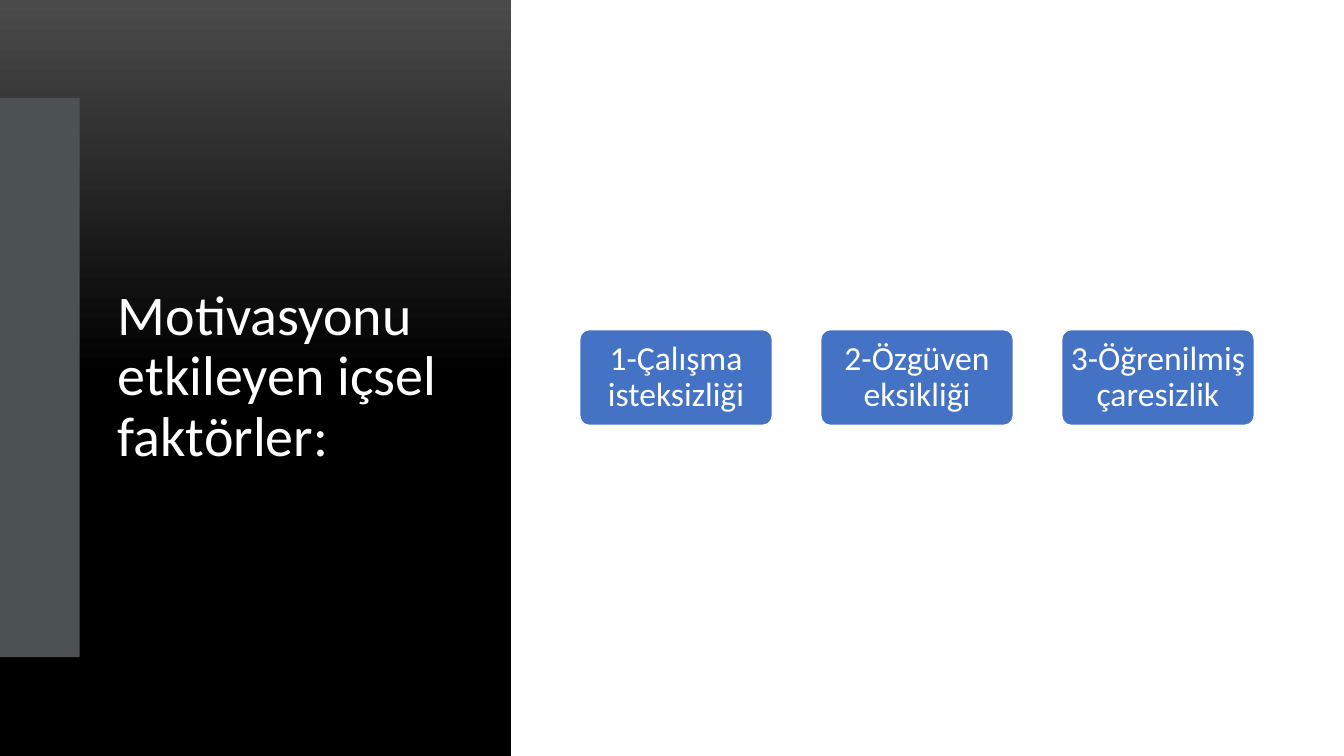
"""Build a slide listing the internal factors that affect motivation."""
from dataclasses import dataclass

from pptx import Presentation
from pptx.dml.color import RGBColor
from pptx.enum.shapes import MSO_SHAPE
from pptx.enum.text import MSO_ANCHOR, MSO_AUTO_SIZE, PP_ALIGN
from pptx.util import Inches, Pt


@dataclass(frozen=True)
class Theme:
    font: str = "Calibri"
    white: RGBColor = RGBColor(0xFF, 0xFF, 0xFF)
    black: RGBColor = RGBColor(0x00, 0x00, 0x00)
    charcoal: RGBColor = RGBColor(0x4B, 0x4B, 0x4B)
    slate: RGBColor = RGBColor(0x4C, 0x52, 0x54)
    blue: RGBColor = RGBColor(0x44, 0x72, 0xC4)
    heading_size: Pt = Pt(40)
    factor_size: Pt = Pt(24)


theme = Theme()


def add_block(preset, left, top, width, height):
    block = slide.shapes.add_shape(
        preset, Inches(left), Inches(top), Inches(width), Inches(height))
    block.shadow.inherit = False
    block.line.fill.background()
    return block


def write(frame, text, size, alignment):
    frame.word_wrap = True
    frame.auto_size = MSO_AUTO_SIZE.NONE
    frame.vertical_anchor = MSO_ANCHOR.MIDDLE
    paragraph = frame.paragraphs[0]
    paragraph.alignment = alignment
    paragraph.line_spacing = 0.9
    run = paragraph.add_run()
    run.text = text
    run.font.name = theme.font
    run.font.size = size
    run.font.color.rgb = theme.white


deck = Presentation()
deck.slide_width = Inches(13.33)
deck.slide_height = Inches(7.5)
slide = deck.slides.add_slide(deck.slide_layouts[5])

heading = slide.shapes.title
heading.left, heading.top = Inches(1.07), Inches(0.97)
heading.width, heading.height = Inches(3.43), Inches(5.55)
write(heading.text_frame, "Motivasyonu etkileyen içsel faktörler:",
      theme.heading_size, PP_ALIGN.LEFT)

panel = add_block(MSO_SHAPE.RECTANGLE, 0, 0, 5.07, 7.5)
panel.fill.gradient()
panel.fill.gradient_angle = 270
for stop, position, color in zip(
        panel.fill.gradient_stops, (0, 0.5), (theme.charcoal, theme.black)):
    stop.position = position
    stop.color.rgb = color
heading._element.addprevious(panel._element)

accent = add_block(MSO_SHAPE.RECTANGLE, 0, 0.97, 0.79, 5.55)
accent.fill.solid()
accent.fill.fore_color.rgb = theme.slate

factors = ("1-Çalışma isteksizliği", "2-Özgüven eksikliği",
           "3-Öğrenilmiş çaresizlik")
for index, factor in enumerate(factors):
    card = add_block(MSO_SHAPE.ROUNDED_RECTANGLE,
                     5.75 + 2.39 * index, 3.27, 1.91, 0.95)
    card.adjustments[0] = 0.1
    card.fill.solid()
    card.fill.fore_color.rgb = theme.blue
    card.line.color.rgb = theme.white
    card.line.width = Pt(1)
    label = card.text_frame
    label.margin_left = label.margin_right = Inches(0.05)
    label.margin_top = label.margin_bottom = Inches(0.03)
    write(label, factor, theme.factor_size, PP_ALIGN.CENTER)

deck.save("out.pptx")
